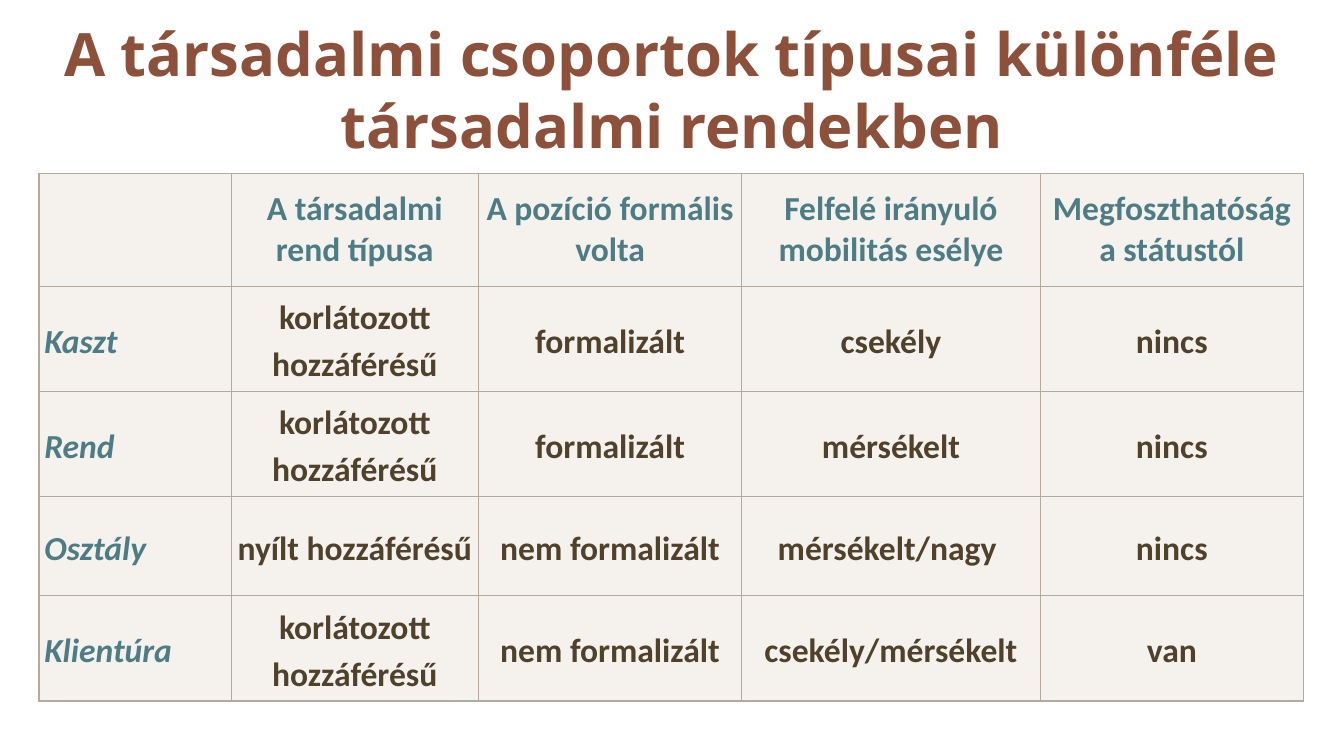
"""Build a slide comparing types of social groups across social orders."""
from dataclasses import dataclass

from lxml.etree import SubElement
from pptx import Presentation
from pptx.dml.color import RGBColor
from pptx.enum.text import MSO_ANCHOR, MSO_AUTO_SIZE, PP_ALIGN
from pptx.oxml import parse_xml
from pptx.oxml.ns import nsdecls, qn
from pptx.util import Inches, Pt

SLIDE_WIDTH = 10
SLIDE_HEIGHT = SLIDE_WIDTH * 9 / 16
BORDER = "B3AA9D"
CELL_FILL = "EFEAE4"
FILL_OPACITY = 60
COLUMN_WIDTHS = (1.43, 1.84, 1.96, 2.22, 1.96)
HEADER_HEIGHT = 0.84
GROUP_HEIGHT = 0.74
THIN, THICK = 0.5, 1


@dataclass(frozen=True)
class Style:
    font: str
    size: int
    color: str
    italic: bool = False
    align: PP_ALIGN = PP_ALIGN.CENTER
    spacing: float = 1.0


@dataclass(frozen=True)
class Group:
    name: str
    order: str
    position: str
    mobility: str
    deprivation: str

    def texts(self) -> tuple[str, ...]:
        return self.name, self.order, self.position, self.mobility, self.deprivation


TITLE = Style("Open Sans", 32, "8D503B")
HEADING = Style("Calibri", 18, "4D7C85")
GROUP_NAME = Style("Calibri", 18, "4D7C85", True, PP_ALIGN.LEFT, 1.15)
FEATURE = Style("Calibri", 18, "50412B", spacing=1.15)

HEADINGS = Group(
    "",
    "A társadalmi rend típusa",
    "A pozíció formális volta",
    "Felfelé irányuló mobilitás esélye",
    "Megfoszthatóság a státustól",
)
GROUPS = (
    Group("Kaszt", "korlátozott hozzáférésű", "formalizált", "csekély", "nincs"),
    Group("Rend", "korlátozott hozzáférésű", "formalizált", "mérsékelt", "nincs"),
    Group("Osztály", "nyílt hozzáférésű", "nem formalizált", "mérsékelt/nagy ", "nincs"),
    Group("Klientúra", "korlátozott hozzáférésű", "nem formalizált", "csekély/mérsékelt", "van"),
)


def rgb(value: str) -> RGBColor:
    return RGBColor.from_string(value)


def apply_format(target, values: dict) -> None:
    for name, value in values.items():
        setattr(target, name, value)


def write(text_frame, text: str, style: Style) -> None:
    text_frame.text = text
    paragraph = text_frame.paragraphs[0]
    apply_format(paragraph, {"alignment": style.align, "line_spacing": style.spacing})
    for run in paragraph.runs:
        apply_format(run.font, {
            "name": style.font, "size": Pt(style.size), "bold": True, "italic": style.italic,
        })
        run.font.color.rgb = rgb(style.color)


def draw_title(slide, text: str) -> None:
    title = slide.shapes.title
    apply_format(title, {
        "left": Inches(0.12), "top": Inches(0.16), "width": Inches(9.76), "height": Inches(1),
    })
    apply_format(title.text_frame, {
        "word_wrap": True, "auto_size": MSO_AUTO_SIZE.NONE, "vertical_anchor": MSO_ANCHOR.MIDDLE,
    })
    write(title.text_frame, text, TITLE)


def draw_cell(cell, text: str, style: Style, borders: dict[str, float]) -> None:
    margins = {f"margin_{side}": Inches(0.04) for side in ("left", "right", "top", "bottom")}
    apply_format(cell, {"vertical_anchor": MSO_ANCHOR.MIDDLE, **margins})
    write(cell.text_frame, text, style)
    cell.fill.solid()
    cell.fill.fore_color.rgb = rgb(CELL_FILL)
    properties = cell._tc.get_or_add_tcPr()
    fill_color = properties.find(f"{qn('a:solidFill')}/{qn('a:srgbClr')}")
    SubElement(fill_color, qn("a:alpha"), val=str(FILL_OPACITY * 1000))
    for index, (side, width) in enumerate(borders.items()):
        properties.insert(index, parse_xml(
            f'<a:ln{side} {nsdecls("a")} w="{Pt(width)}"><a:solidFill>'
            f'<a:srgbClr val="{BORDER}"/></a:solidFill></a:ln{side}>'
        ))


def cell_style(row: int, column: int) -> Style:
    if row == 0:
        return HEADING
    return GROUP_NAME if column == 0 else FEATURE


def draw_table(slide, rows: tuple[Group, ...]) -> None:
    heights = [HEADER_HEIGHT] + [GROUP_HEIGHT] * (len(rows) - 1)
    table = slide.shapes.add_table(
        len(rows), len(COLUMN_WIDTHS), Inches(0.29), Inches(1.29),
        Inches(sum(COLUMN_WIDTHS)), Inches(sum(heights)),
    ).table
    for column, width in zip(table.columns, COLUMN_WIDTHS):
        column.width = Inches(width)
    last_row, last_column = len(rows) - 1, len(COLUMN_WIDTHS) - 1
    for r, (group, height) in enumerate(zip(rows, heights)):
        table.rows[r].height = Inches(height)
        for c, text in enumerate(group.texts()):
            outer = {"L": c == 0, "R": c == last_column, "T": r == 0, "B": r == last_row}
            borders = {side: THICK if edge else THIN for side, edge in outer.items()}
            draw_cell(table.cell(r, c), text, cell_style(r, c), borders)


def main() -> None:
    presentation = Presentation()
    apply_format(presentation, {
        "slide_width": Inches(SLIDE_WIDTH), "slide_height": Inches(SLIDE_HEIGHT),
    })
    slide = presentation.slides.add_slide(presentation.slide_layouts[5])
    draw_title(slide, "A társadalmi csoportok típusai különféle társadalmi rendekben")
    draw_table(slide, (HEADINGS, *GROUPS))
    presentation.save("out.pptx")


if __name__ == "__main__":
    main()
